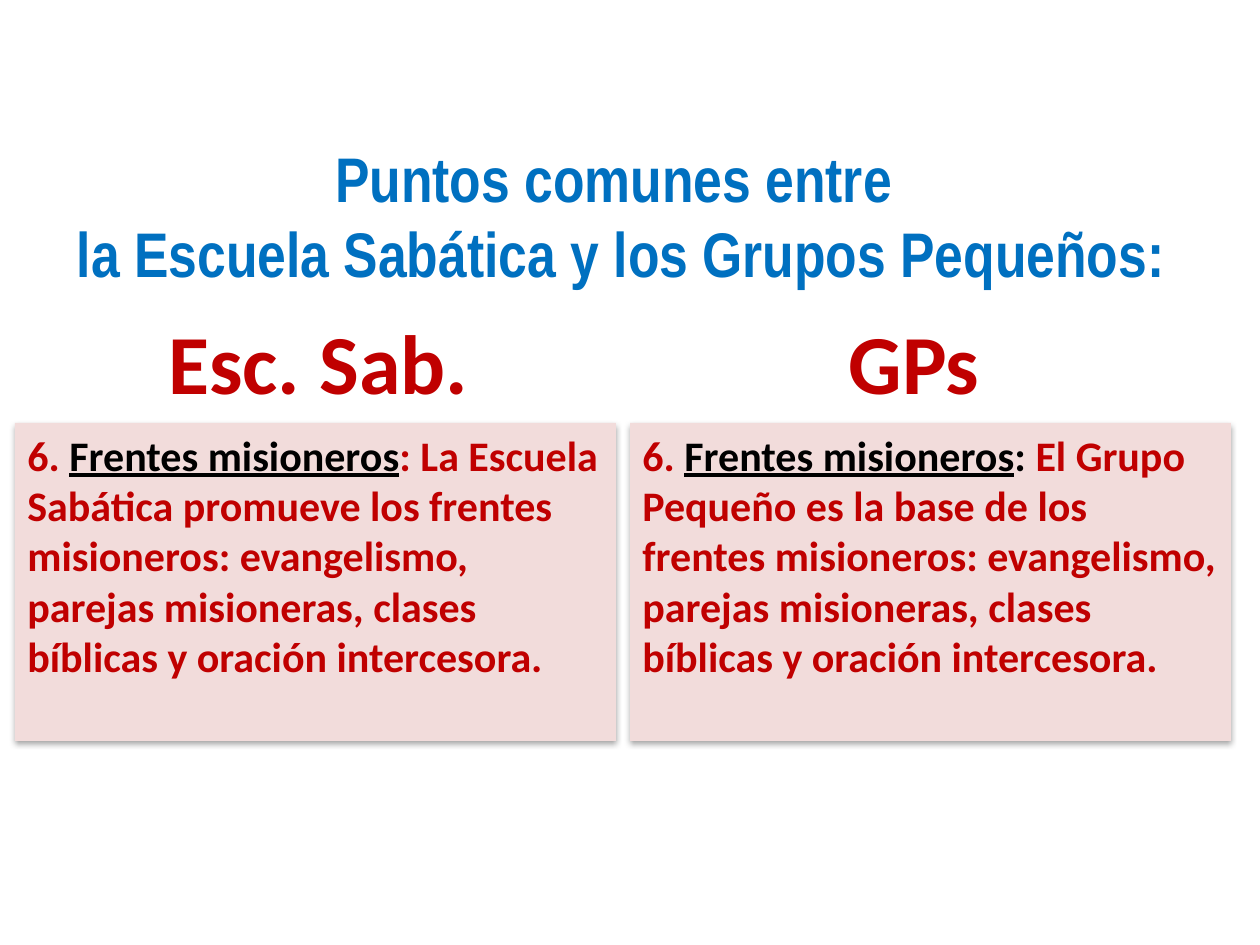
from lxml.etree import SubElement
from pptx import Presentation
from pptx.dml.color import RGBColor
from pptx.enum.shapes import MSO_SHAPE
from pptx.enum.text import MSO_ANCHOR, MSO_AUTO_SIZE, PP_ALIGN
from pptx.oxml.ns import qn
from pptx.util import Emu, Pt

BLUE = RGBColor(0x00, 0x70, 0xC0)
RED = RGBColor(0xC0, 0x00, 0x00)
BLACK = RGBColor(0x00, 0x00, 0x00)
PINK = RGBColor(0xF2, 0xDC, 0xDB)

PX_PER_INCH = 126
COLUMN_TOP, COLUMN_WIDTH = 304, 601
HEADING_HEIGHT = 115
CARD_OFFSET, CARD_HEIGHT = 119, 318

TITLE = ["Puntos comunes entre ", "la Escuela Sabática y los Grupos Pequeños:"]
FRONTS = "frentes misioneros: evangelismo, parejas misioneras, clases bíblicas y oración intercesora."
TOPIC = [("6. ", RED, False), ("Frentes misioneros", BLACK, True)]

# Column left, heading, heading offset and width, card runs
COLUMNS = [
    (15, "Esc. Sab.", 139, 329,
     TOPIC + [(": La Escuela Sabática promueve los " + FRONTS, RED, False)]),
    (630, "GPs", 205, 158,
     TOPIC + [(": ", BLACK, False),
              ("El Grupo Pequeño es la base de los " + FRONTS, RED, False)]),
]


def px(n):
    return Emu(round(n * 914400 / PX_PER_INCH))


def format_run(r, size, color, name="Calibri"):
    r.font.name = name
    r.font.size = Pt(size)
    r.font.bold = True
    r.font.color.rgb = color


def add_shadow(sp):
    sp.shadow.inherit = False
    effects = sp.element.spPr.find(qn("a:effectLst"))
    outer = SubElement(effects, qn("a:outerShdw"), blurRad="40000",
                       dist="23000", dir="5400000", rotWithShape="0")
    color = SubElement(outer, qn("a:srgbClr"), val="000000")
    SubElement(color, qn("a:alpha"), val="35000")


def place_title(s, x, y, w, h):
    sp = s.shapes.title
    sp.left, sp.top, sp.width, sp.height = px(x), px(y), px(w), px(h)
    tf = sp.text_frame
    tf.text = "\n".join(TITLE)
    tf.word_wrap = True
    tf.auto_size = MSO_AUTO_SIZE.NONE
    tf.vertical_anchor = MSO_ANCHOR.MIDDLE
    for p in tf.paragraphs:
        p.alignment = PP_ALIGN.CENTER
        format_run(p.runs[0], 36, BLUE, "Arial Narrow")


def add_column(s, x, y, w, heading, heading_dx, heading_w, parts):
    # Heading
    sp = s.shapes.add_textbox(px(x + heading_dx), px(y), px(heading_w), px(HEADING_HEIGHT))
    tf = sp.text_frame
    tf.text = heading
    tf.word_wrap = False
    tf.auto_size = MSO_AUTO_SIZE.SHAPE_TO_FIT_TEXT
    p = tf.paragraphs[0]
    p.alignment = PP_ALIGN.CENTER
    format_run(p.runs[0], 48, RED)

    # Card
    sp = s.shapes.add_shape(MSO_SHAPE.RECTANGLE, px(x), px(y + CARD_OFFSET),
                            px(w), px(CARD_HEIGHT))
    sp.fill.solid()
    sp.fill.fore_color.rgb = PINK
    sp.line.fill.background()
    add_shadow(sp)
    tf = sp.text_frame
    tf.word_wrap = True
    tf.vertical_anchor = MSO_ANCHOR.TOP
    p = tf.paragraphs[0]
    p.alignment = PP_ALIGN.LEFT
    for text, color, underline in parts:
        r = p.add_run()
        r.text = text
        format_run(r, 24, color)
        r.font.underline = underline


def main():
    prs = Presentation()
    prs.slide_width, prs.slide_height = px(1260), px(945)
    s = prs.slides.add_slide(prs.slide_layouts[5])
    place_title(s, 54, 86, 1134, 258)
    for x, *content in COLUMNS:
        add_column(s, x, COLUMN_TOP, COLUMN_WIDTH, *content)
    prs.save("out.pptx")


if __name__ == "__main__":
    main()
